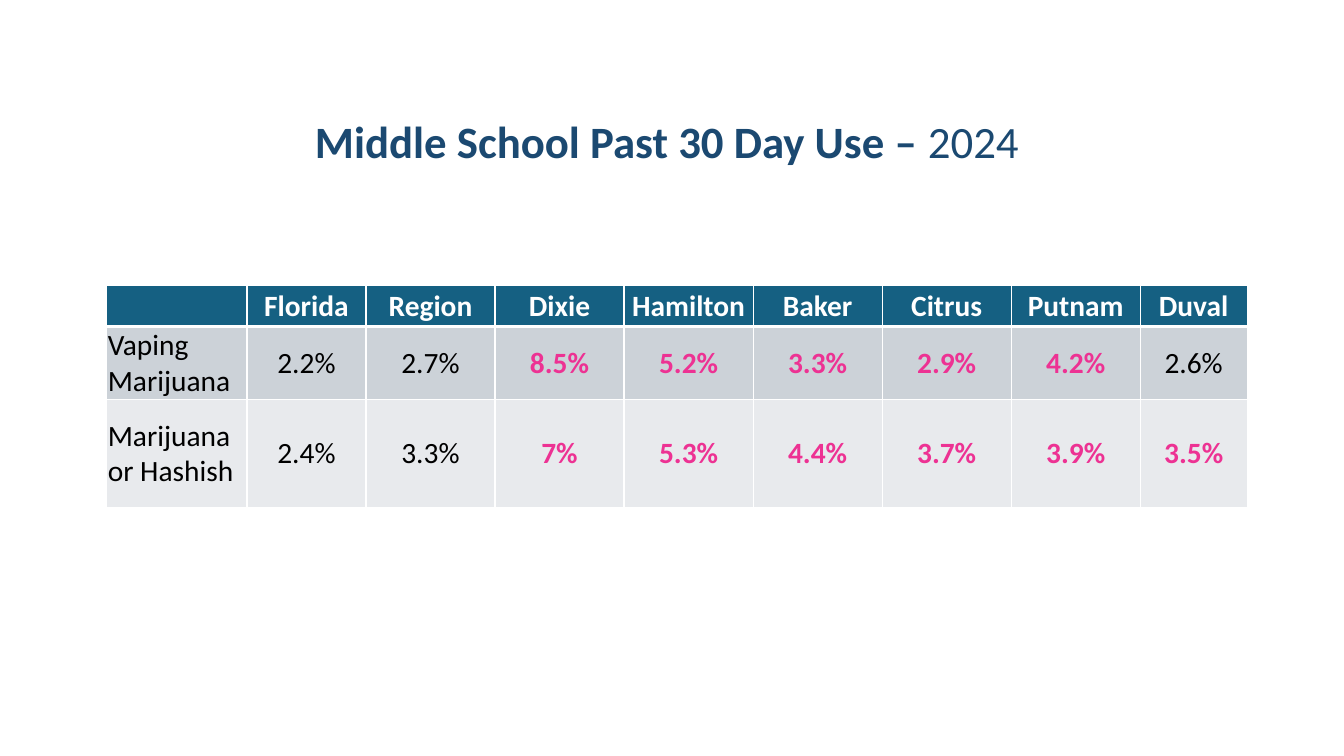
from lxml import etree
from pptx import Presentation
from pptx import util as u
from pptx.dml.color import RGBColor
from pptx.enum import text
from pptx.oxml import ns

NAVY = RGBColor(0x1B, 0x49, 0x71)
TEAL = RGBColor(0x15, 0x60, 0x82)
WHITE = RGBColor(0xFF, 0xFF, 0xFF)
BLACK = RGBColor(0x00, 0x00, 0x00)
PINK = RGBColor(0xED, 0x32, 0x93)
DARK_BAND = RGBColor(0xCC, 0xD2, 0xD8)
LIGHT_BAND = RGBColor(0xE8, 0xEA, 0xED)

HEADERS = ["", "Florida", "Region", "Dixie", "Hamilton", "Baker", "Citrus", "Putnam", "Duval"]
USE_RATES = [
    ("Vaping Marijuana", [2.2, 2.7, 8.5, 5.2, 3.3, 2.9, 4.2, 2.6]),
    ("Marijuana or Hashish", [2.4, 3.3, 7, 5.3, 4.4, 3.7, 3.9, 3.5]),
]
COLUMN_WIDTHS = [1.39, 1.18] + [1.28] * 6 + [1.06]
ROW_HEIGHTS = [0.41, 0.72, 1.07]


def add_run(paragraph, words, size, color, bold):
    run = paragraph.add_run()
    run.text = words
    run.font.name = "Calibri"
    run.font.size = u.Pt(size)
    run.font.color.rgb = color
    run.font.bold = bold


def style_cell(cell, fill, bottom_width):
    properties = cell._tc.get_or_add_tcPr()
    for side, width in (("L", 1), ("R", 1), ("T", 1), ("B", bottom_width)):
        line = etree.SubElement(properties, ns.qn(f"a:ln{side}"), w=str(u.Pt(width)))
        solid = etree.SubElement(line, ns.qn("a:solidFill"))
        etree.SubElement(solid, ns.qn("a:srgbClr"), val=str(WHITE))
    cell.fill.solid()
    cell.fill.fore_color.rgb = fill
    cell.margin_left = cell.margin_right = cell.margin_top = u.Inches(0.01)
    cell.margin_bottom = 0
    cell.vertical_anchor = text.MSO_ANCHOR.MIDDLE


presentation = Presentation()
presentation.slide_width = u.Inches(13.33)
presentation.slide_height = u.Inches(7.5)
slide = presentation.slides.add_slide(presentation.slide_layouts[6])

# Table
table = slide.shapes.add_table(
    len(ROW_HEIGHTS), len(COLUMN_WIDTHS), u.Inches(1.06), u.Inches(2.83),
    u.Inches(sum(COLUMN_WIDTHS)), u.Inches(sum(ROW_HEIGHTS))).table
for column, width in zip(table.columns, COLUMN_WIDTHS):
    column.width = u.Inches(width)
for row, height in zip(table.rows, ROW_HEIGHTS):
    row.height = u.Inches(height)

# Header row
for cell, header in zip(table.rows[0].cells, HEADERS):
    style_cell(cell, TEAL, 3)
    paragraph = cell.text_frame.paragraphs[0]
    paragraph.alignment = text.PP_ALIGN.CENTER
    if header:
        add_run(paragraph, header, 21, WHITE, True)

# Body rows: a county above both Florida and its region is highlighted
for row_index, (substance, rates) in enumerate(USE_RATES, 1):
    band = DARK_BAND if row_index % 2 else LIGHT_BAND
    label_cell, *rate_cells = table.rows[row_index].cells
    style_cell(label_cell, band, 1)
    add_run(label_cell.text_frame.paragraphs[0], substance, 21, BLACK, False)
    benchmark = max(rates[:2])
    for cell, rate in zip(rate_cells, rates):
        style_cell(cell, band, 1)
        paragraph = cell.text_frame.paragraphs[0]
        paragraph.alignment = text.PP_ALIGN.CENTER
        high = rate > benchmark
        add_run(paragraph, f"{rate}%", 21, PINK if high else BLACK, high)

# Title
title = slide.shapes.add_textbox(u.Inches(1.53), u.Inches(1.08), u.Inches(10.27), u.Inches(0.64))
title.text_frame.word_wrap = True
title.text_frame.auto_size = text.MSO_AUTO_SIZE.SHAPE_TO_FIT_TEXT
paragraph = title.text_frame.paragraphs[0]
paragraph.alignment = text.PP_ALIGN.CENTER
add_run(paragraph, "Middle School Past 30 Day Use – ", 32, NAVY, True)
add_run(paragraph, "2024 ", 32, NAVY, False)

presentation.save("out.pptx")
